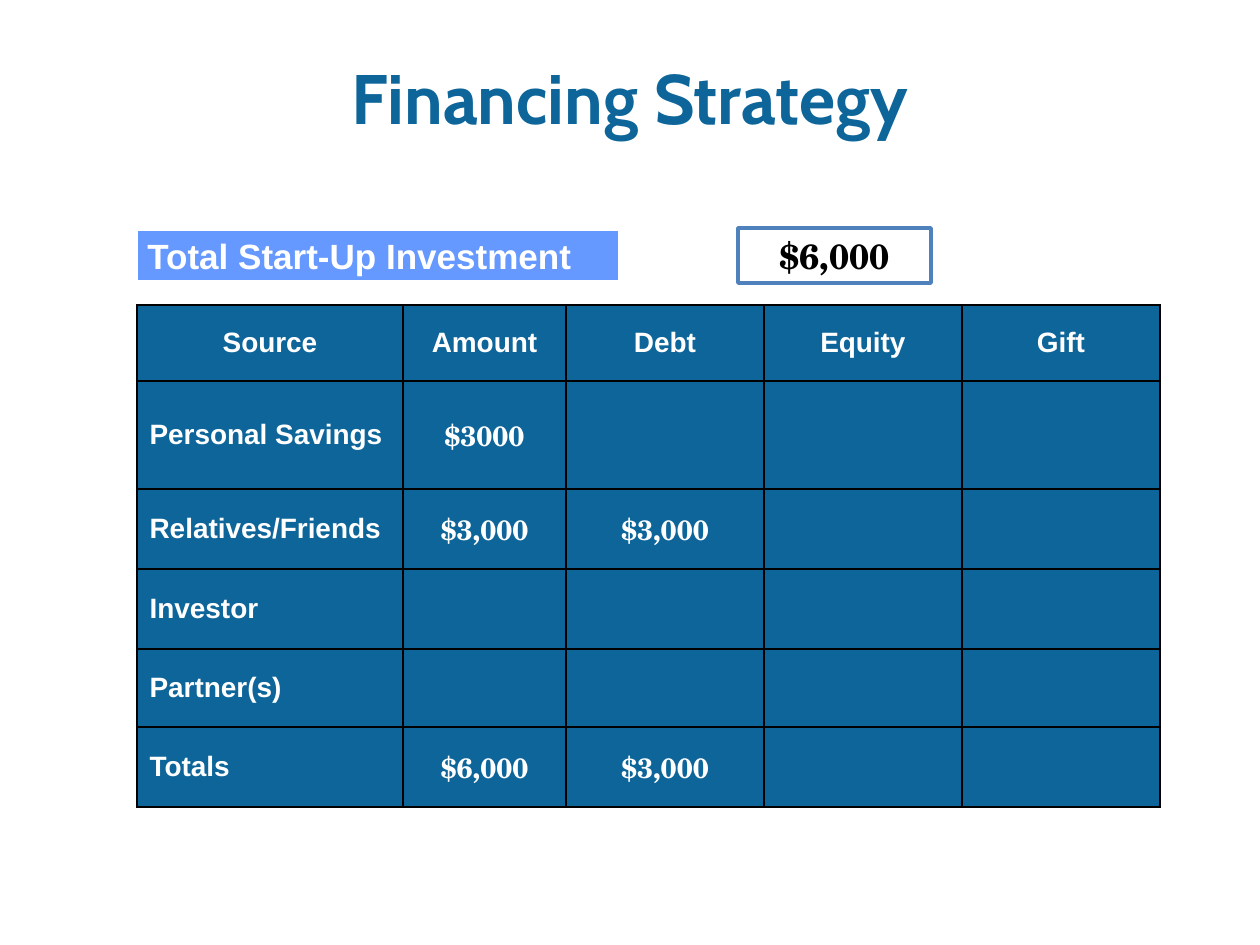
from lxml.etree import SubElement
from pptx import Presentation
from pptx.dml.color import RGBColor
from pptx.enum.shapes import MSO_SHAPE
from pptx.enum.text import MSO_ANCHOR, PP_ALIGN
from pptx.oxml.ns import qn
from pptx.util import Emu, Pt

COLORS = {
    "navy": "0D659A",
    "sky": "6699FF",
    "frame": "4F81BD",
    "white": "FFFFFF",
    "black": "000000",
}
LABEL_FONT = "Arial"
MONEY_FONT = "TeX Gyre Schola"
COLUMN_WIDTHS = [266, 163, 198, 198, 198]
ROW_HEIGHTS = [76, 108, 80, 80, 78, 80]
SOURCES = [
    ["Source", "Amount", "Debt", "Equity", "Gift"],
    ["Personal Savings", "$3000", "", "", ""],
    ["Relatives/Friends", "$3,000", "$3,000", "", ""],
    ["Investor", "", "", "", ""],
    ["Partner(s)", "", "", "", ""],
    ["Totals", "$6,000", "$3,000", "", ""],
]


def px(length):
    return Emu(round(length * 914400 / 126))


def color(name):
    return RGBColor.from_string(COLORS[name])


def write(frame, text, size, font, ink, align):
    paragraph = frame.paragraphs[0]
    paragraph.alignment = align
    run = paragraph.add_run()
    run.text = text
    run.font.color.rgb = color(ink)
    for name, value in {"size": Pt(size), "name": font, "bold": True}.items():
        setattr(run.font, name, value)
    return paragraph


def add_title(slide, text):
    title = slide.shapes.add_textbox(px(63), px(38), px(1134), px(141))
    frame = title.text_frame
    frame.word_wrap = True
    frame.vertical_anchor = MSO_ANCHOR.MIDDLE
    line = write(frame, text, 40, "Cabin", "navy", PP_ALIGN.CENTER)
    line.line_spacing = Pt(34)


def add_box(slide, left, width, text, font, ink, fill, outline, weight, align):
    box = slide.shapes.add_shape(
        MSO_SHAPE.RECTANGLE, px(left), px(228), px(width), px(55))
    box.shadow.inherit = False
    box.fill.solid()
    box.fill.fore_color.rgb = color(fill)
    box.line.color.rgb = color(outline)
    box.line.width = Pt(weight)
    box.text_frame.word_wrap = True
    box.text_frame.vertical_anchor = MSO_ANCHOR.TOP
    write(box.text_frame, text, 20, font, ink, align)


def add_borders(cell):
    properties = cell._tc.get_or_add_tcPr()
    for position, side in enumerate(("lnL", "lnR", "lnT", "lnB")):
        border = properties.makeelement(qn(f"a:{side}"), {"w": str(Pt(1))})
        properties.insert(position, border)
        fill = SubElement(border, qn("a:solidFill"))
        SubElement(fill, qn("a:srgbClr"), val=COLORS["black"])


def add_sources(slide):
    table = slide.shapes.add_table(
        len(ROW_HEIGHTS), len(COLUMN_WIDTHS), px(137), px(305),
        px(sum(COLUMN_WIDTHS)), px(sum(ROW_HEIGHTS))).table
    for column, width in zip(table.columns, COLUMN_WIDTHS):
        column.width = px(width)
    for row, height in zip(table.rows, ROW_HEIGHTS):
        row.height = px(height)
    for r, entries in enumerate(SOURCES):
        for c, text in enumerate(entries):
            cell = table.cell(r, c)
            cell.vertical_anchor = MSO_ANCHOR.MIDDLE
            cell.fill.solid()
            cell.fill.fore_color.rgb = color("navy")
            add_borders(cell)
            if text:
                font = MONEY_FONT if text.startswith("$") else LABEL_FONT
                align = PP_ALIGN.LEFT if r and not c else PP_ALIGN.CENTER
                write(cell.text_frame, text, 16, font, "white", align)


def main():
    deck = Presentation()
    deck.slide_width, deck.slide_height = px(1260), px(945)
    slide = deck.slides.add_slide(deck.slide_layouts[6])
    add_title(slide, "Financing Strategy")
    add_sources(slide)
    add_box(slide, 738, 193, "$6,000", MONEY_FONT, "black",
            "white", "frame", 2, PP_ALIGN.CENTER)
    add_box(slide, 135, 486, "Total Start-Up Investment", LABEL_FONT, "white",
            "sky", "white", 3, PP_ALIGN.LEFT)
    deck.save("out.pptx")


if __name__ == "__main__":
    main()
